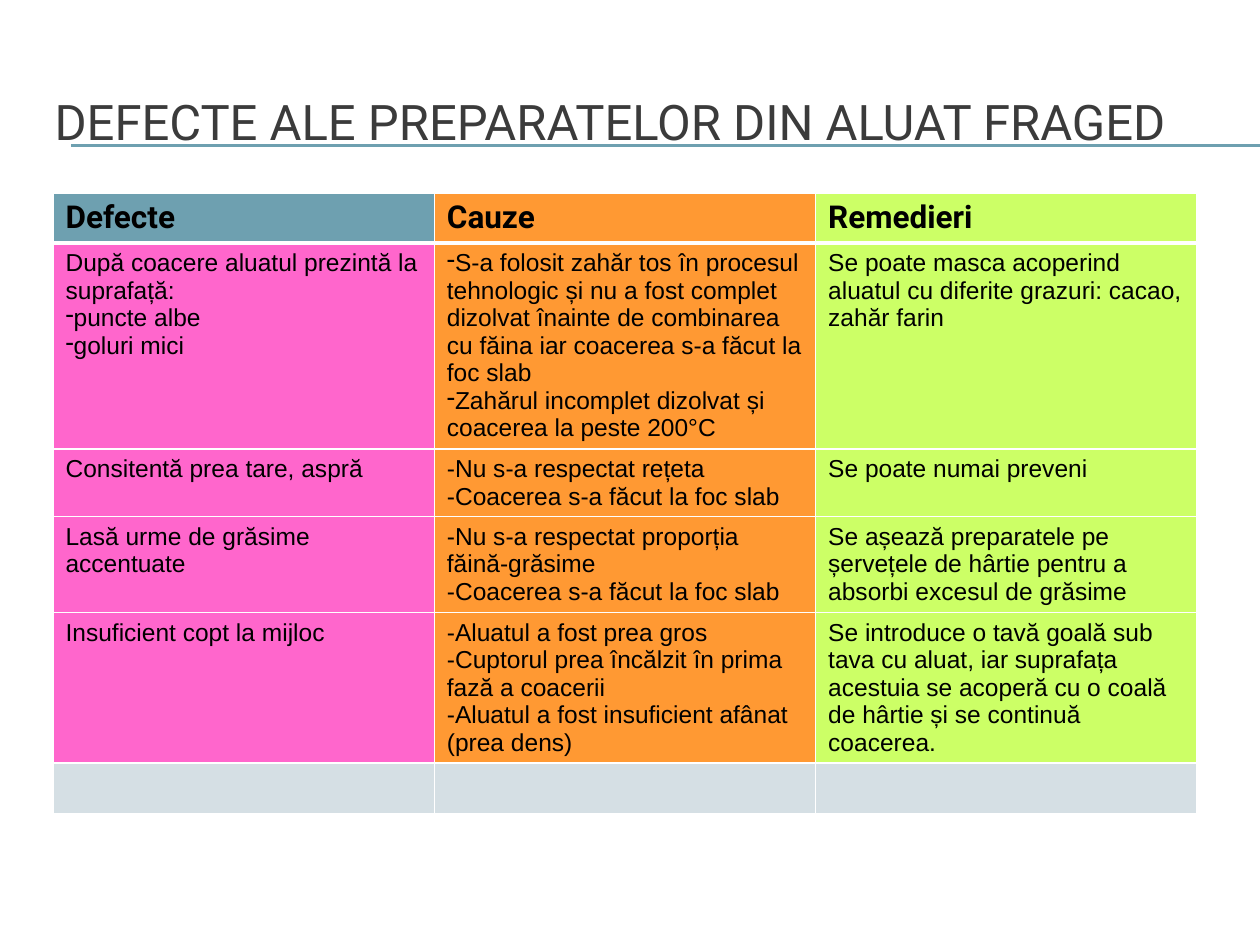
from lxml import etree
from pptx import Presentation
from pptx import util as u
from pptx.dml.color import RGBColor
from pptx.enum import shapes, text
from pptx.oxml import parse_xml
from pptx.oxml.ns import nsdecls, qn

EMU_PER_PX = 914400 / 126
COLORS = {
    "white": "FFFFFF", "black": "000000", "title": "3B3B3B", "teal": "6EA0B0",
    "pink": "FF66CC", "orange": "FF9933", "lime": "CCFF66", "grey": "D5DFE4",
}
HEADER_FILLS = ["teal", "orange", "lime"]
BODY_FILLS = ["pink", "orange", "lime"]
ROW_HEIGHTS = [50, 206, 67, 96, 150, 51]
BULLET = "• "  # marks a paragraph that gets a real dash bullet
HEADERS = ["Defecte", "Cauze", "Remedieri"]
ROWS = [
    [["După coacere aluatul prezintă la suprafață:", "• puncte albe", "• goluri mici"],
     ["• S-a folosit zahăr tos în procesul tehnologic și nu a fost complet dizolvat "
      "înainte de combinarea cu făina iar coacerea s-a făcut la foc slab",
      "• Zahărul incomplet dizolvat și coacerea la peste 200°C"],
     ["Se poate masca acoperind aluatul cu diferite grazuri: cacao, zahăr farin"]],
    [["Consitentă prea tare, aspră"],
     ["-Nu s-a respectat rețeta", "-Coacerea s-a făcut la foc slab"],
     ["Se poate numai preveni"]],
    [["Lasă urme de grăsime accentuate"],
     ["-Nu s-a respectat proporția făină-grăsime", "-Coacerea s-a făcut la foc slab"],
     ["Se așează preparatele pe șervețele de hârtie pentru a absorbi excesul de grăsime"]],
    [["Insuficient copt la mijloc"],
     ["-Aluatul a fost prea gros", "-Cuptorul prea încălzit în prima fază a coacerii",
      "-Aluatul a fost insuficient afânat (prea dens)"],
     ["Se introduce o tavă goală sub tava cu aluat, iar suprafața acestuia se acoperă "
      "cu o coală de hârtie și se continuă coacerea."]],
]


def px(n):
    return u.Emu(round(n * EMU_PER_PX))


def rgb(name):
    return RGBColor.from_string(COLORS[name])


class Deck:
    def __init__(self, width, height):
        self.prs = Presentation()
        self.prs.slide_width, self.prs.slide_height = px(width), px(height)
        self.s = self.prs.slides.add_slide(self.prs.slide_layouts[5])

    def style(self, p, font, size, color, bold=False):
        p.font.name, p.font.size, p.font.bold = font, u.Pt(size), bold
        p.font.color.rgb = rgb(color)

    def title(self, wording, x, y, w, h):
        sp = self.s.shapes.title
        sp.left, sp.top, sp.width, sp.height = map(px, (x, y, w, h))
        tf = sp.text_frame
        tf.text = wording
        tf.word_wrap = True
        tf.auto_size = text.MSO_AUTO_SIZE.NONE
        tf.vertical_anchor = text.MSO_ANCHOR.MIDDLE
        p = tf.paragraphs[0]
        p.alignment = text.PP_ALIGN.LEFT
        self.style(p, "Roboto", 28, "title")

    def line(self, x1, y1, x2, y2):
        c = self.s.shapes.add_connector(
            shapes.MSO_CONNECTOR.STRAIGHT, px(x1), px(y1), px(x2), px(y2))
        c.line.color.rgb, c.line.width = rgb("teal"), u.Pt(0.75)
        etree.SubElement(c._element.spPr, qn("a:effectLst"))

    def table(self, x, y, w, heights, cols):
        t = self.s.shapes.add_table(
            len(heights), cols, px(x), px(y), px(w), px(sum(heights))).table
        t.horz_banding = False
        for col in t.columns:
            col.width = px(w / cols)
        for row, h in zip(t.rows, heights):
            row.height = px(h)
        return t

    def cell(self, cell, paragraphs, fill, font="Arial", size=14, bold=False, top=1, bottom=1):
        cell.fill.solid()
        cell.fill.fore_color.rgb = rgb(fill)
        self.borders(cell, L=1, R=1, T=top, B=bottom)
        tf = cell.text_frame
        for i, wording in enumerate(paragraphs):
            p = tf.add_paragraph() if i else tf.paragraphs[0]
            p.text = wording.removeprefix(BULLET)
            self.style(p, font, size, "black", bold)
            if wording.startswith(BULLET):
                self.bullet(p)

    def bullet(self, p):
        pPr = p._p.get_or_add_pPr()
        pPr.set("marL", "0")
        pPr.set("indent", "0")
        pPr.insert(0, parse_xml(f'<a:buChar {nsdecls("a")} char="-"/>'))

    def borders(self, cell, **points):
        """Draw white cell borders; points maps the sides L, R, T, B to widths."""
        tcPr = cell._tc.get_or_add_tcPr()
        for i, (side, width) in enumerate(points.items()):
            tcPr.insert(i, parse_xml(
                f'<a:ln{side} {nsdecls("a")} w="{u.Pt(width)}"><a:solidFill>'
                f'<a:srgbClr val="{COLORS["white"]}"/></a:solidFill></a:ln{side}>'))


def main():
    d = Deck(1260, 945)
    for y in (145, 146):
        d.line(71, y, 1260, y)
    d.title("DEFECTE ALE PREPARATELOR DIN ALUAT FRAGED", 42, 63, 1197, 116)

    t = d.table(53, 193, 1144, ROW_HEIGHTS, len(HEADERS))
    for c, (header, fill) in enumerate(zip(HEADERS, HEADER_FILLS)):
        d.cell(t.cell(0, c), [header], fill, "Roboto", 18, True, bottom=3)
    for r, row in enumerate(ROWS, 1):
        for c, (paragraphs, fill) in enumerate(zip(row, BODY_FILLS)):
            d.cell(t.cell(r, c), paragraphs, fill, top=3 if r == 1 else 1)
    for c in range(len(HEADERS)):
        d.cell(t.cell(len(ROW_HEIGHTS) - 1, c), [], "grey")
    d.prs.save("out.pptx")


if __name__ == "__main__":
    main()
